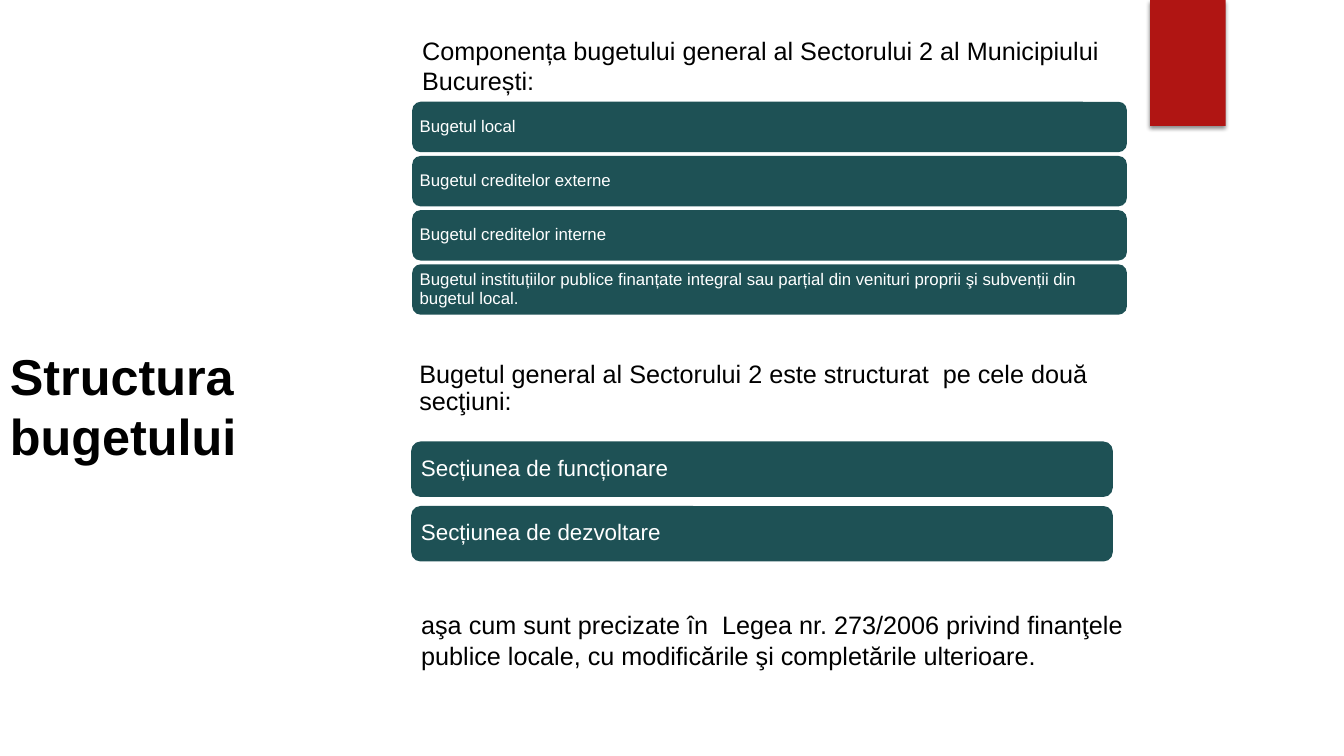
"""Build the slide on the structure of the district budget."""
from dataclasses import dataclass

from lxml.etree import SubElement
from pptx import Presentation
from pptx.dml.color import RGBColor
from pptx.enum.shapes import MSO_SHAPE
from pptx.enum.text import MSO_ANCHOR, PP_ALIGN
from pptx.oxml.ns import qn
from pptx.shapes.autoshape import Shape
from pptx.slide import Slide
from pptx.util import Emu, Inches, Pt

SLIDE_WIDTH, SLIDE_HEIGHT = Inches(13.333), Inches(7.5)
COLUMNS, ROWS = 160, 90
COLORS = {"accent": "B01513", "bar": "1E5155", "dark": "000000", "light": "FFFFFF"}


@dataclass(frozen=True)
class Area:
    left: float
    top: float
    width: float
    height: float

    def lengths(self) -> tuple[Emu, Emu, Emu, Emu]:
        column, row = SLIDE_WIDTH / COLUMNS, SLIDE_HEIGHT / ROWS
        return (Emu(round(self.left * column)), Emu(round(self.top * row)),
                Emu(round(self.width * column)), Emu(round(self.height * row)))


@dataclass(frozen=True)
class TextStyle:
    size: int
    color: str = "dark"
    bold: bool = False
    anchor: MSO_ANCHOR = MSO_ANCHOR.MIDDLE
    side_margin: float = 0.1
    end_margin: float = 0.05
    line_spacing: float = 1.0


@dataclass(frozen=True)
class TextBlock:
    text: str
    area: Area
    style: TextStyle


@dataclass(frozen=True)
class BarList:
    labels: tuple[str, ...]
    first: Area
    step: float
    style: TextStyle


BODY = TextStyle(18, anchor=MSO_ANCHOR.TOP)
TEXT_BLOCKS = (
    TextBlock("Structura bugetului", Area(0, 33.24, 56.4, 30), TextStyle(36, bold=True)),
    TextBlock("Componența bugetului general al Sectorului 2 al Municipiului București:",
              Area(49.08, 3.6, 89.52, 12.12), BODY),
    TextBlock("aşa cum sunt precizate în  Legea nr. 273/2006 privind finanţele publice locale, "
              "cu modificările şi completările ulterioare.",
              Area(48.96, 72, 88.32, 12.12), BODY),
    TextBlock("Bugetul general al Sectorului 2 este structurat  pe cele două secţiuni:",
              Area(49.08, 42.24, 83.52, 8.16),
              TextStyle(18, side_margin=0.07, end_margin=0.07, line_spacing=0.9)),
)
BAR_LISTS = (
    BarList(("Bugetul local", "Bugetul creditelor externe", "Bugetul creditelor interne",
             "Bugetul instituțiilor publice finanțate integral sau parțial din venituri "
             "proprii şi subvenții din bugetul local."),
            Area(49.08, 12.12, 85.08, 6), 6.45,
            TextStyle(12, "light", side_margin=0.05, line_spacing=0.9)),
    BarList(("Secțiunea de funcționare", "Secțiunea de dezvoltare"),
            Area(48.96, 52.56, 83.52, 6.6), 7.68,
            TextStyle(16, "light", side_margin=0.07, end_margin=0.07, line_spacing=0.9)),
)


def apply_format(target: object, values: dict[str, object]) -> None:
    for name, value in values.items():
        setattr(target, name, value)


def write_text(shape: Shape, text: str, style: TextStyle) -> None:
    frame = shape.text_frame
    apply_format(frame, {
        "text": text, "word_wrap": True, "vertical_anchor": style.anchor,
        "margin_left": Inches(style.side_margin), "margin_right": Inches(style.side_margin),
        "margin_top": Inches(style.end_margin), "margin_bottom": Inches(style.end_margin),
    })
    paragraph = frame.paragraphs[0]
    apply_format(paragraph, {"alignment": PP_ALIGN.LEFT, "line_spacing": style.line_spacing})
    font = paragraph.runs[0].font
    apply_format(font, {"name": "Arial", "size": Pt(style.size), "bold": style.bold})
    font.color.rgb = RGBColor.from_string(COLORS[style.color])


def add_filled_shape(slide: Slide, kind: MSO_SHAPE, area: Area, color: str) -> Shape:
    shape = slide.shapes.add_shape(kind, *area.lengths())
    shape.shadow.inherit = False
    shape.fill.solid()
    shape.fill.fore_color.rgb = RGBColor.from_string(COLORS[color])
    shape.line.fill.background()
    return shape


def add_drop_shadow(shape: Shape) -> None:
    effects = shape.element.spPr.find(qn("a:effectLst"))
    shadow = SubElement(effects, qn("a:outerShdw"), blurRad=str(Pt(3)), dist=str(Pt(2)),
                        dir="5400000", algn="ctr", rotWithShape="0")
    color = SubElement(shadow, qn("a:srgbClr"), val=COLORS["dark"])
    SubElement(color, qn("a:alpha"), val="45000")


def add_bars(slide: Slide, bars: BarList) -> None:
    first = bars.first
    for index, label in enumerate(bars.labels):
        area = Area(first.left, first.top + index * bars.step, first.width, first.height)
        bar = add_filled_shape(slide, MSO_SHAPE.ROUNDED_RECTANGLE, area, "bar")
        write_text(bar, label, bars.style)


def main() -> None:
    presentation = Presentation()
    apply_format(presentation, {"slide_width": SLIDE_WIDTH, "slide_height": SLIDE_HEIGHT})
    slide = presentation.slides.add_slide(presentation.slide_layouts[6])
    ribbon = add_filled_shape(slide, MSO_SHAPE.RECTANGLE, Area(136.92, 0, 9, 15), "accent")
    add_drop_shadow(ribbon)
    for bars in BAR_LISTS:
        add_bars(slide, bars)
    for block in TEXT_BLOCKS:
        write_text(slide.shapes.add_textbox(*block.area.lengths()), block.text, block.style)
    presentation.save("out.pptx")


if __name__ == "__main__":
    main()
